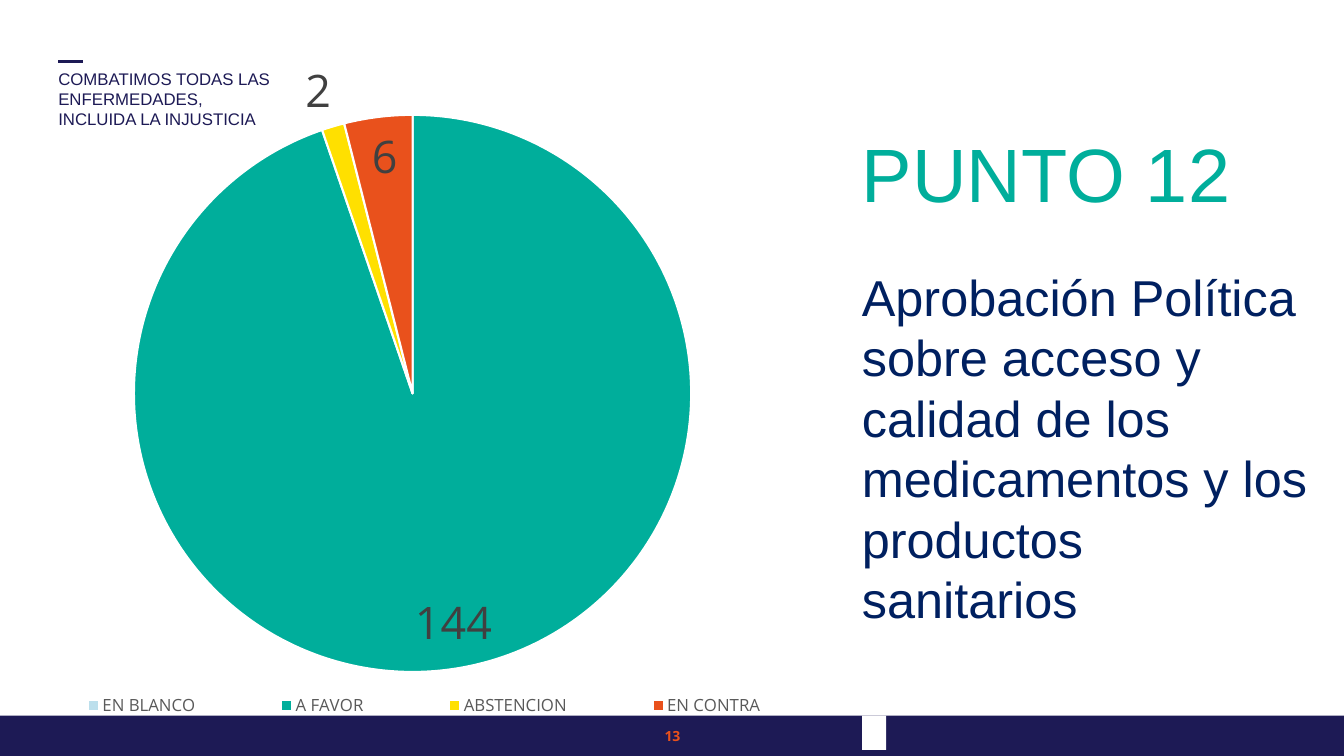
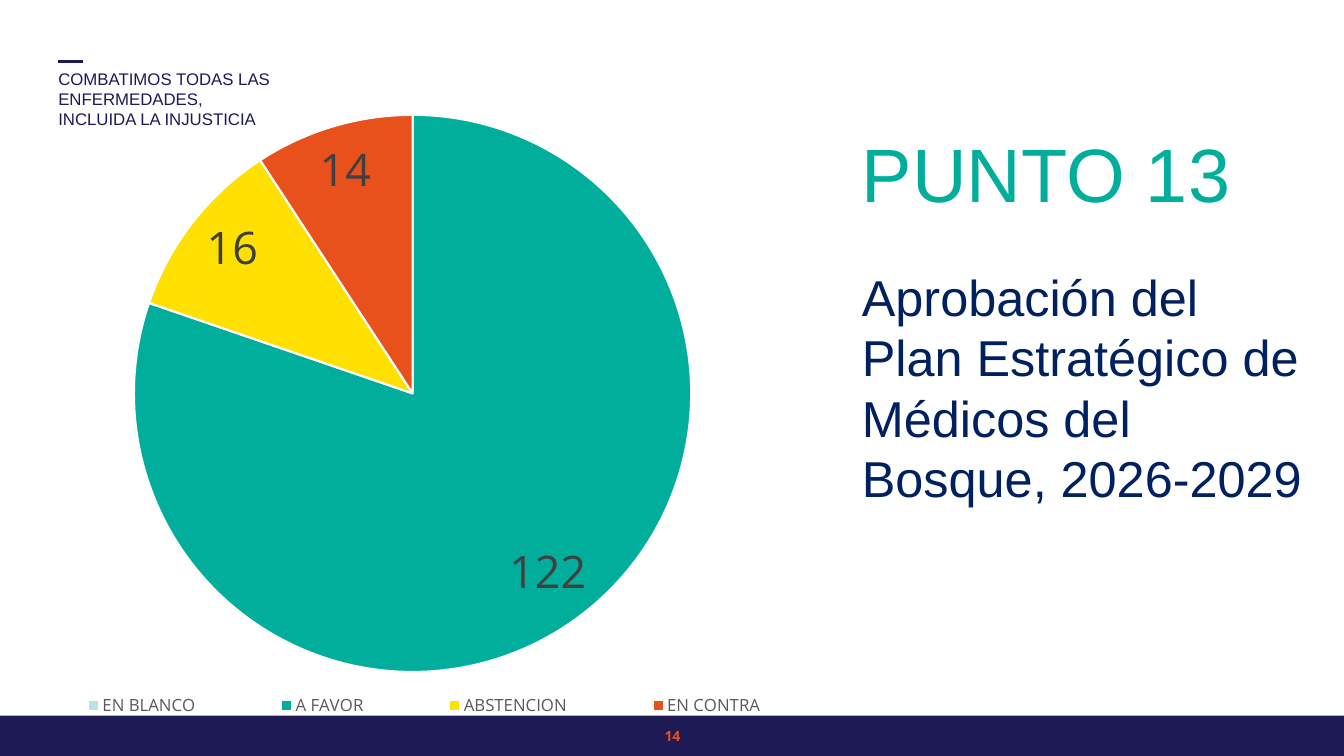
"""Build the voting result slides, one pie chart per agenda point."""
from pptx import Presentation
from pptx.chart.data import CategoryChartData
from pptx.dml.color import RGBColor
from pptx.enum.chart import XL_CHART_TYPE, XL_LABEL_POSITION, XL_LEGEND_POSITION
from pptx.enum.shapes import MSO_CONNECTOR, MSO_SHAPE
from pptx.enum.text import MSO_ANCHOR, PP_ALIGN
from pptx.oxml import parse_xml
from pptx.oxml.ns import nsdecls
from pptx.util import Inches, Pt
from lxml.etree import SubElement
from pptx.oxml.ns import qn

COLORS = {
    "navy": "1D1A55",
    "blue": "002060",
    "green": "00AE9B",
    "yellow": "FFE000",
    "orange": "E9511C",
    "pale": "BCDFEC",
    "label": "404040",
    "legend": "595959",
    "white": "FFFFFF",
}
HEADING_FONT = "Arial"
DATA_FONT = "Open Sans"
SLOGAN = ["COMBATIMOS TODAS LAS ENFERMEDADES,", "INCLUIDA LA INJUSTICIA"]
CHOICES = [
    ("EN BLANCO", "pale"),
    ("A FAVOR", "green"),
    ("ABSTENCION", "yellow"),
    ("EN CONTRA", "orange"),
]
POINTS = [
    {
        "number": "13",
        "title": "PUNTO 12",
        "body": "Aprobación Política sobre acceso y calidad de los medicamentos y los productos sanitarios",
        "votes": (0, 144, 2, 6),
        "band_gap": True,
    },
    {
        "number": "14",
        "title": "PUNTO 13",
        "body": "Aprobación del Plan Estratégico de Médicos del Bosque, 2026-2029",
        "votes": (0, 122, 16, 14),
        "band_gap": False,
    },
]
SLIDE_WIDTH, SLIDE_HEIGHT = 13.33, 7.5
BAND_TOP = 7.1
CHART_WIDTH = 8.67
PLOT_AREA = (1.19, 1.14, 5.81, 5.53)
LEGEND_AREA = (0.08, 6.8, 8.26, 0.4)


def color(name):
    return RGBColor.from_string(COLORS[name])


def style_font(font, name, size, color_name, bold=False):
    font.name = name
    font.size = Pt(size)
    font.bold = bold
    font.color.rgb = color(color_name)


def add_text(slide, box, lines, font_style, align=PP_ALIGN.LEFT, anchor=MSO_ANCHOR.TOP):
    frame = slide.shapes.add_textbox(*map(Inches, box)).text_frame
    frame.word_wrap = True
    frame.vertical_anchor = anchor
    paragraph = frame.paragraphs[0]
    paragraph.alignment = align
    for index, line in enumerate(lines):
        if index:
            paragraph.add_line_break()
        run = paragraph.add_run()
        run.text = line
        style_font(run.font, *font_style)


def add_block(slide, box, color_name):
    shape = slide.shapes.add_shape(MSO_SHAPE.RECTANGLE, *map(Inches, box))
    shape.shadow.inherit = False
    shape.fill.solid()
    shape.fill.fore_color.rgb = color(color_name)
    shape.line.fill.background()


def add_frame(slide, number):
    add_block(slide, (0, BAND_TOP, SLIDE_WIDTH, SLIDE_HEIGHT - BAND_TOP), "navy")
    add_text(slide, (0.48, 0.63, 2.83, 0.71), SLOGAN, (HEADING_FONT, 12, "navy"))
    rule = slide.shapes.add_connector(
        MSO_CONNECTOR.STRAIGHT, Inches(0.58), Inches(0.61), Inches(0.82), Inches(0.61)
    )
    rule.line.color.rgb = color("navy")
    rule.line.width = Pt(1.5)
    SubElement(rule._element.spPr, qn("a:effectLst"))
    add_text(slide, (6.12, 7.17, 1.1, 0.27), [number], (DATA_FONT, 10, "orange", True),
             PP_ALIGN.CENTER, MSO_ANCHOR.MIDDLE)


def manual_layout(area, target=""):
    left, top, width, height = area
    fractions = {
        "x": left / CHART_WIDTH,
        "y": top / SLIDE_HEIGHT,
        "w": width / CHART_WIDTH,
        "h": height / SLIDE_HEIGHT,
    }
    modes = '<c:xMode val="edge"/><c:yMode val="edge"/>'
    values = "".join(f'<c:{key} val="{value:.3f}"/>' for key, value in fractions.items())
    return parse_xml(
        f'<c:layout {nsdecls("c")}><c:manualLayout>{target}{modes}{values}'
        "</c:manualLayout></c:layout>"
    )


def add_pie(slide, votes):
    data = CategoryChartData(number_format="0")
    data.categories = [name for name, _ in CHOICES]
    data.add_series("Series 1", votes)
    chart = slide.shapes.add_chart(
        XL_CHART_TYPE.PIE, 0, 0, Inches(CHART_WIDTH), Inches(SLIDE_HEIGHT), data
    ).chart
    chart.has_title = False
    chart.font.name = DATA_FONT
    chart.font.size = Pt(10)
    no_fill = parse_xml(
        f'<c:spPr {nsdecls("c", "a")}><a:noFill/><a:ln><a:noFill/></a:ln></c:spPr>'
    )
    chart._chartSpace.chart.addnext(no_fill)

    chart.has_legend = True
    legend = chart.legend
    legend.position = XL_LEGEND_POSITION.BOTTOM
    legend.include_in_layout = False
    style_font(legend.font, DATA_FONT, 12, "legend")
    for old_layout in legend._element.findall(qn("c:layout")):
        legend._element.remove(old_layout)
    legend._element.find(qn("c:legendPos")).addnext(manual_layout(LEGEND_AREA))

    plot_area = chart._chartSpace.chart.plotArea
    for old_layout in plot_area.findall(qn("c:layout")):
        plot_area.remove(old_layout)
    plot_area.insert(0, manual_layout(PLOT_AREA, '<c:layoutTarget val="inner"/>'))

    plot = chart.plots[0]
    plot.vary_by_categories = True
    series = plot.series[0]
    for index, (_, color_name) in enumerate(CHOICES):
        point_format = series.points[index].format
        point_format.fill.solid()
        point_format.fill.fore_color.rgb = color(color_name)
        point_format.line.color.rgb = color("white")
        point_format.line.width = Pt(1.5)
    labels = series.data_labels
    labels.show_value = True
    labels.number_format = "0;;"
    labels.number_format_is_linked = False
    labels.position = XL_LABEL_POSITION.BEST_FIT
    style_font(labels.font, DATA_FONT, 32, "label")


def main():
    presentation = Presentation()
    presentation.slide_width = Inches(SLIDE_WIDTH)
    presentation.slide_height = Inches(SLIDE_HEIGHT)
    for point in POINTS:
        slide = presentation.slides.add_slide(presentation.slide_layouts[6])
        add_frame(slide, point["number"])
        add_pie(slide, point["votes"])
        if point["band_gap"]:
            add_block(slide, (8.55, BAND_TOP, 0.24, 0.34), "white")
        add_text(slide, (8.45, 2.59, 4.63, 4.34), [point["body"]], (HEADING_FONT, 36, "blue"))
        add_text(slide, (8.45, 1.21, 4.13, 1.01), [point["title"]], (HEADING_FONT, 54, "green"))
    presentation.save("out.pptx")


if __name__ == "__main__":
    main()
